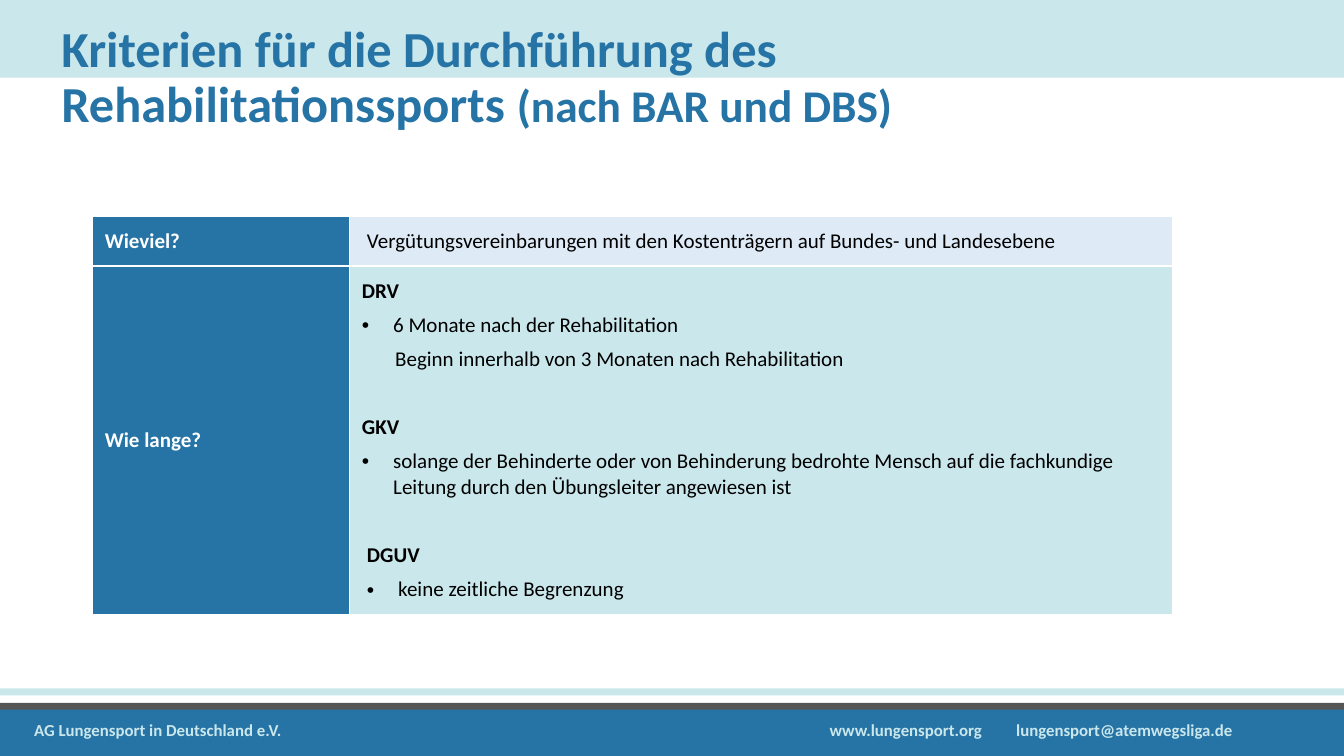
import pptx
import pptx.dml.color
import pptx.enum.shapes
import pptx.enum.text
import pptx.oxml
import pptx.oxml.ns
import pptx.util
from pptx.util import Inches

BLUE, AQUA, PALE, GREY = "2673A5", "CAE7EC", "DEEBF7", "575656"
WHITE, BLACK = "FFFFFF", "000000"
FONT = "Calibri"
BODY_SIZE = 15

BANDS = [
    (7.02, 0.48, BLUE),
    (6.97, 0.07, GREY),
    (6.9, 0.07, WHITE),
    (6.83, 0.07, AQUA),
    (0, 0.77, AQUA),
]
TITLE = [
    ("Kriterien für die Durchführung des Rehabilitationssports ", 36),
    ("(nach BAR und DBS)", 32.4),
]
FOOTER = ["AG Lungensport in Deutschland e.V.", "www.lungensport.org",
          "lungensport@atemwegsliga.de"]
FOOTER_TABS = [7.89, 9.74]

COLUMN_WIDTHS = [2.55, 8.16]
ROW_HEIGHTS = [0.48, 3.46]
# kind, left indent, text
FEE = [("plain", 0.05, "Vergütungsvereinbarungen mit den Kostenträgern auf Bundes- und Landesebene")]
DURATION = [
    ("head", 0, "DRV"),
    ("bullet", 0.31, "6 Monate nach der Rehabilitation"),
    ("plain", 0.33, "Beginn innerhalb von 3 Monaten nach Rehabilitation"),
    ("head", 0, "GKV"),
    ("bullet", 0.31, "solange der Behinderte oder von Behinderung bedrohte Mensch auf die "
                     "fachkundige Leitung durch den Übungsleiter angewiesen ist"),
    ("head", 0.05, "DGUV"),
    ("bullet", 0.36, "keine zeitliche Begrenzung"),
]
ROWS = [
    ([("head", 0, "Wieviel?")], FEE, PALE),
    ([("head", 0, "Wie lange?")], DURATION, AQUA),
]


def rgb(value):
    return pptx.dml.color.RGBColor.from_string(value)


def xml(body):
    return pptx.oxml.parse_xml(body.replace(" ", f' {pptx.oxml.ns.nsdecls("a")} ', 1))


def style(run, size, color, bold=True):
    run.font.name = FONT
    run.font.size = pptx.util.Pt(size)
    run.font.bold = bold
    run.font.color.rgb = rgb(color)


def add_text_frame(slide, left, top, width, height):
    frame = slide.shapes.add_textbox(*map(Inches, (left, top, width, height))).text_frame
    frame.word_wrap = True
    return frame


def add_band(slide, top, height, color):
    band = slide.shapes.add_shape(pptx.enum.shapes.MSO_SHAPE.RECTANGLE, 0, Inches(top),
                                  Inches(13.33), Inches(height))
    band.shadow.inherit = False
    band.fill.solid()
    band.fill.fore_color.rgb = rgb(color)
    band.line.fill.background()


def add_title(slide):
    frame = add_text_frame(slide, 0.51, 0.3, 11.29, 0.96)
    frame.vertical_anchor = pptx.enum.text.MSO_ANCHOR.MIDDLE
    heading = frame.paragraphs[0]
    heading.line_spacing = 0.9
    for text, size in TITLE:
        run = heading.add_run()
        run.text = text
        style(run, size, BLUE)


def add_footer(slide):
    contact = add_text_frame(slide, 0.24, 7.09, 12.82, 0.4).paragraphs[0]
    contact.text = "\t".join(FOOTER)
    stops = "".join(f'<a:tab pos="{Inches(x)}" algn="l"/>' for x in FOOTER_TABS)
    contact._p.get_or_add_pPr().append(xml(f'<a:tabLst >{stops}</a:tabLst>'))
    for run in contact.runs:
        style(run, 12, AQUA)


def fill_cell(cell, entries, background, color):
    cell.margin_left = cell.margin_right = Inches(0.12)
    cell.margin_top = cell.margin_bottom = Inches(0.12)
    properties = cell._tc.get_or_add_tcPr()
    for side in "LRTB":
        properties.append(xml(f'<a:ln{side} w="12700"><a:solidFill><a:srgbClr val="{WHITE}"/>'
                              f'</a:solidFill></a:ln{side}>'))
    cell.fill.solid()
    cell.fill.fore_color.rgb = rgb(background)
    frame = cell.text_frame
    for index, (kind, indent, text) in enumerate(entries):
        entry = frame.add_paragraph() if index else frame.paragraphs[0]
        entry.text = text
        layout = entry._p.get_or_add_pPr()
        layout.set("marL", str(Inches(indent)))
        layout.set("indent", str(Inches(-0.31 if kind == "bullet" else 0)))
        if kind == "bullet":
            layout.append(xml('<a:buFont typeface="Arial"/>'))
            layout.append(xml('<a:buChar char="•"/>'))
        if index and kind == "head":
            entry.space_before = pptx.util.Pt(24.4)
        if index < len(entries) - 1:
            entry.space_after = pptx.util.Pt(6)
        style(entry.runs[0], BODY_SIZE, color, kind == "head")


def add_criteria(slide):
    criteria = slide.shapes.add_table(
        len(ROW_HEIGHTS), len(COLUMN_WIDTHS), Inches(0.92), Inches(2.15),
        Inches(sum(COLUMN_WIDTHS)), Inches(sum(ROW_HEIGHTS))).table
    for column, width in zip(criteria.columns, COLUMN_WIDTHS):
        column.width = Inches(width)
    for row, height, (question, answer, background) in zip(criteria.rows, ROW_HEIGHTS, ROWS):
        row.height = Inches(height)
        fill_cell(row.cells[0], question, BLUE, WHITE)
        row.cells[0].vertical_anchor = pptx.enum.text.MSO_ANCHOR.MIDDLE
        fill_cell(row.cells[1], answer, background, BLACK)


def main():
    deck = pptx.Presentation()
    deck.slide_width, deck.slide_height = Inches(13.33), Inches(7.5)
    slide = deck.slides.add_slide(deck.slide_layouts[6])
    for band in BANDS:
        add_band(slide, *band)
    add_footer(slide)
    add_title(slide)
    add_criteria(slide)
    deck.save("out.pptx")


if __name__ == "__main__":
    main()
